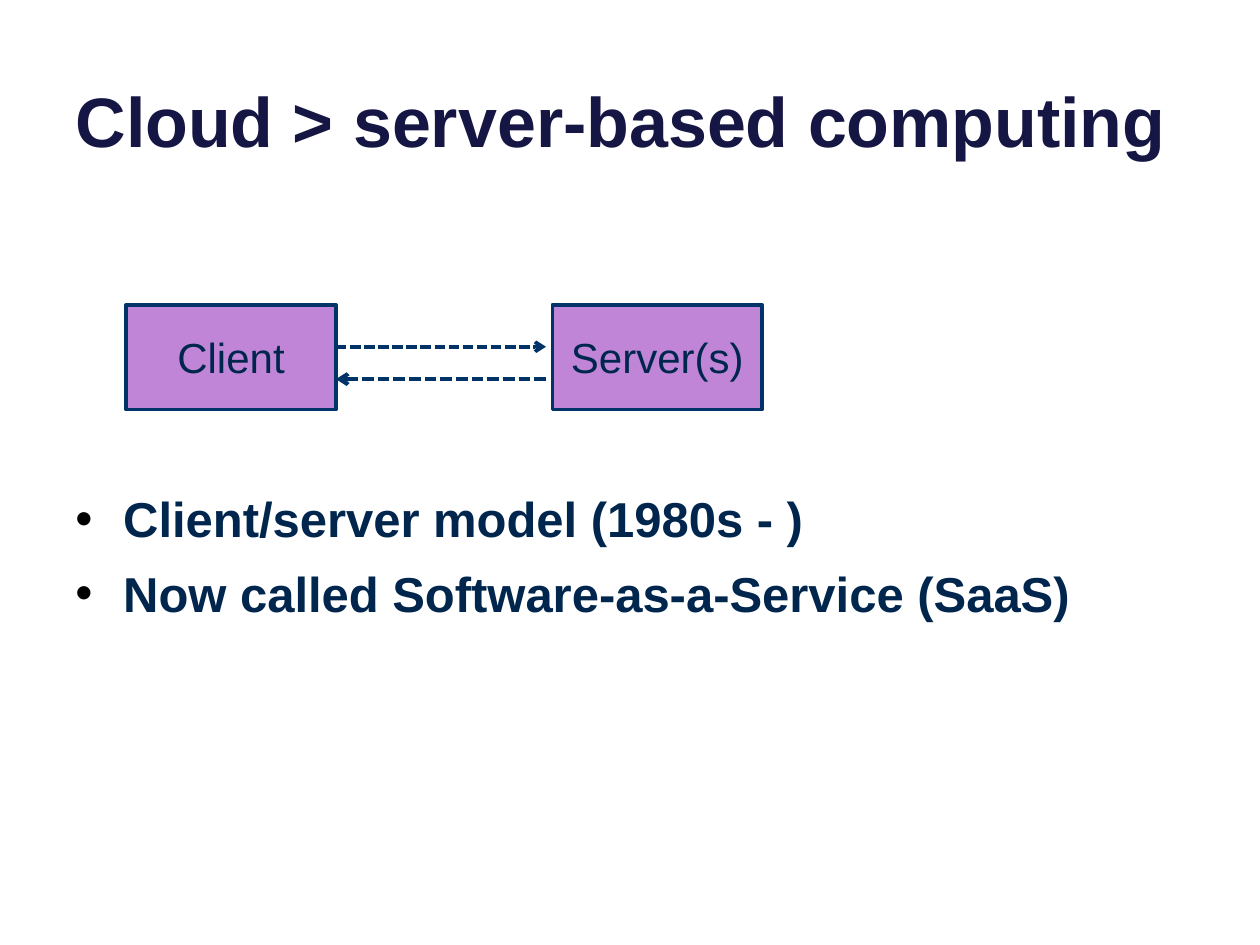
from lxml.etree import SubElement
from pptx import Presentation
from pptx.dml.color import RGBColor
from pptx.enum.dml import MSO_LINE
from pptx.enum.shapes import MSO_CONNECTOR, MSO_SHAPE
from pptx.enum.text import MSO_ANCHOR, PP_ALIGN
from pptx.oxml.ns import qn
from pptx.util import Inches, Pt

COLORS = {"title": "161645", "text": "00264D", "box": "C085D7",
          "line": "003367", "bullet": "000000"}
FONT = "Arial"


def rgb(name):
    return RGBColor.from_string(COLORS[name])


def style(p, size, color, bold=False):
    p.font.name, p.font.size, p.font.bold = FONT, Pt(size), bold
    p.font.color.rgb = rgb(color)


def add_title(slide, box, text):
    sp = slide.shapes.title
    sp.left, sp.top, sp.width, sp.height = map(Inches, box)
    tf = sp.text_frame
    tf.text, tf.word_wrap = text, True
    tf.vertical_anchor = MSO_ANCHOR.BOTTOM
    p = tf.paragraphs[0]
    p.alignment = PP_ALIGN.LEFT
    style(p, 40, "title", True)


def add_node(slide, box, text):
    sp = slide.shapes.add_shape(MSO_SHAPE.RECTANGLE, *map(Inches, box))
    sp.shadow.inherit = False
    sp.fill.solid()
    sp.fill.fore_color.rgb = rgb("box")
    sp.line.color.rgb, sp.line.width = rgb("line"), Pt(2)
    tf = sp.text_frame
    tf.text, tf.word_wrap = text, False
    tf.vertical_anchor = MSO_ANCHOR.MIDDLE
    p = tf.paragraphs[0]
    p.alignment = PP_ALIGN.CENTER
    style(p, 24, "text")


def add_arrow(slide, x1, x2, y, width):
    ln = slide.shapes.add_connector(
        MSO_CONNECTOR.STRAIGHT, *map(Inches, (x1, y, x2, y)))
    ln.line.color.rgb, ln.line.width = rgb("line"), Pt(width)
    ln.line.dash_style = MSO_LINE.SQUARE_DOT  # sysDash
    SubElement(ln.line._get_or_add_ln(), qn("a:tailEnd"), type="arrow")
    SubElement(ln._element.spPr, qn("a:effectLst"))


def add_exchange(slide, box):
    """Two nodes at the ends of the box, a request and a reply between."""
    left, top, width, height = box
    node_w, gap = width * 0.33, 0.05
    right = left + width - node_w
    for x, text in ((left, "Client"), (right, "Server(s)")):
        add_node(slide, (x, top, node_w, height), text)
    start, end = left + node_w, right - gap
    add_arrow(slide, start, end, top + height * 0.4, 2)
    add_arrow(slide, end, start, top + height * 0.71, 2.25)


def add_bullets(slide, box, items):
    tf = slide.shapes.add_textbox(*map(Inches, box)).text_frame
    tf.word_wrap = True
    tf.text = "\n".join(items)
    for p in tf.paragraphs:
        style(p, 28, "text", True)
        p.space_before = Pt(9)
        pPr = p._p.get_or_add_pPr()
        pPr.set("marL", str(Inches(0.38)))
        pPr.set("indent", str(-Inches(0.38)))
        # Bullet elements go after spacing and before the font defaults
        clr = pPr.makeelement(qn("a:buClr"), {})
        SubElement(clr, qn("a:srgbClr"), val=COLORS["bullet"])
        font = pPr.makeelement(qn("a:buFont"), {"typeface": FONT})
        char = pPr.makeelement(qn("a:buChar"), {"char": "•"})
        defaults = pPr.find(qn("a:defRPr"))
        for el in (clr, font, char):
            defaults.addprevious(el)


def main():
    prs = Presentation()
    prs.slide_width, prs.slide_height = Inches(10), Inches(7.5)
    slide = prs.slides.add_slide(prs.slide_layouts[5])
    margin, content_w = 0.5, 9

    add_exchange(slide, (1, 2.42, 5.05, 0.83))
    add_title(slide, (margin, -0.37, content_w, 1.7),
              "Cloud > server-based computing")
    add_bullets(slide, (margin, 3.83, content_w, 4.5),
                ["Client/server model (1980s - )",
                 "Now called Software-as-a-Service (SaaS)"])
    prs.save("out.pptx")


if __name__ == "__main__":
    main()
